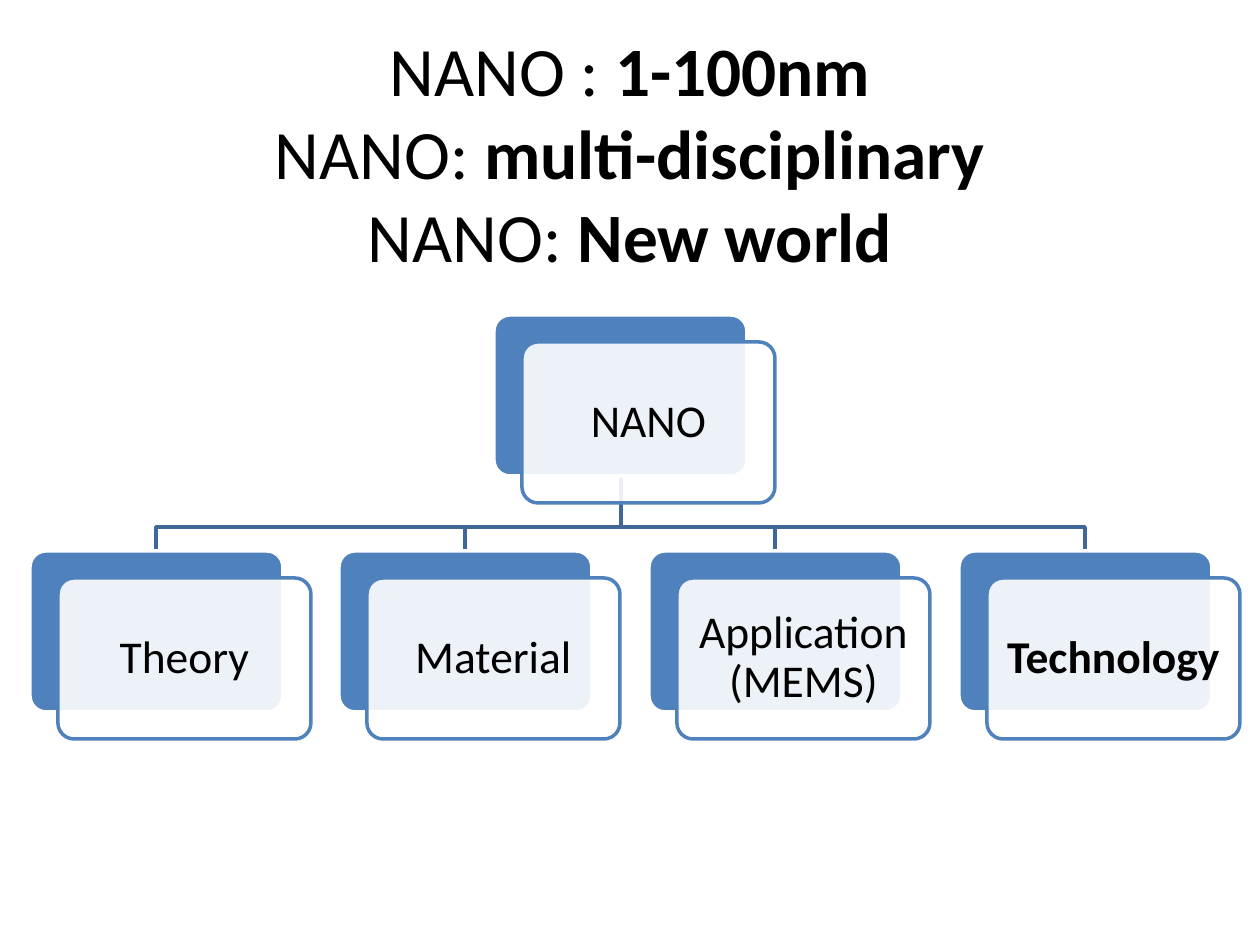
import pptx
import pptx.util
import pptx.dml.color
import pptx.enum.shapes
import pptx.enum.text
import pptx.oxml.ns
import lxml.etree

PX = 914400 / 126  # EMU in one px
BLUE = pptx.dml.color.RGBColor(0x4F, 0x81, 0xBD)
DARK_BLUE = pptx.dml.color.RGBColor(0x3F, 0x67, 0x97)
WHITE = pptx.dml.color.RGBColor(0xFF, 0xFF, 0xFF)
BLACK = pptx.dml.color.RGBColor(0x00, 0x00, 0x00)

CARD_WIDTH, CARD_HEIGHT = 253, 161
SHIFT_X, SHIFT_Y = 28, 27
ROOT_LEFT, ROOT_TOP = 494, 315
ROW_LEFT, ROW_TOP, ROW_SPAN = 30, 551, 929
BUS_Y = 527


def write_text(shape, lines, size, spacing=1.0, inset=None):
    """Write lines, each a list of (text, bold) runs, centred in the shape."""
    frame = shape.text_frame
    frame.word_wrap = True
    frame.auto_size = pptx.enum.text.MSO_AUTO_SIZE.NONE
    frame.vertical_anchor = pptx.enum.text.MSO_ANCHOR.MIDDLE
    if inset is not None:
        frame.margin_left = frame.margin_right = round(inset * PX)
        frame.margin_top = frame.margin_bottom = round(inset * PX)
    paragraph = frame.paragraphs[0]
    paragraph.alignment = pptx.enum.text.PP_ALIGN.CENTER
    paragraph.line_spacing = spacing
    for index, line in enumerate(lines):
        if index:
            paragraph.add_line_break()
        for text, bold in line:
            run = paragraph.add_run()
            run.text = text
            run.font.name = "Calibri"
            run.font.size = pptx.util.Pt(size)
            run.font.bold = bold
            run.font.color.rgb = BLACK


def add_card(left, top, fill, line):
    shape = slide.shapes.add_shape(
        pptx.enum.shapes.MSO_SHAPE.ROUNDED_RECTANGLE,
        *(round(value * PX) for value in (left, top, CARD_WIDTH, CARD_HEIGHT)))
    shape.adjustments[0] = 0.1
    shape.shadow.inherit = False
    shape.fill.solid()
    shape.fill.fore_color.rgb = fill
    shape.line.color.rgb = line
    shape.line.width = pptx.util.Pt(2)
    return shape


presentation = pptx.Presentation()
presentation.slide_width = pptx.util.Inches(10)
presentation.slide_height = pptx.util.Inches(7.5)
slide = presentation.slides.add_slide(presentation.slide_layouts[5])

# Title
title = slide.shapes.title
title.left, title.top, title.width, title.height = (
    round(value * PX) for value in (63, 38, 1134, 228))
write_text(title, [
    [("NANO : ", False), ("1-100nm", True)],
    [("NANO: ", False), ("multi-disciplinary", True)],
    [("NANO:", False), (" New world", True)],
], size=39.6)

# Branches of the chart: label, bold
branches = [("Theory", False), ("Material", False),
            ("Application (MEMS)", False), ("Technology", True)]
row_lefts = [ROW_LEFT + ROW_SPAN * index // (len(branches) - 1)
             for index in range(len(branches))]

# Elbow lines from the root to each branch
root_x = ROOT_LEFT + CARD_WIDTH // 2 + 1
for left in reversed(row_lefts):
    branch_x = left + CARD_WIDTH // 2
    builder = slide.shapes.build_freeform(root_x, ROOT_TOP + CARD_HEIGHT, scale=PX)
    builder.add_line_segments(
        [(root_x, BUS_Y), (branch_x, BUS_Y), (branch_x, ROW_TOP)], close=False)
    elbow = builder.convert_to_shape()
    elbow.shadow.inherit = False
    elbow.fill.background()
    elbow.line.color.rgb = DARK_BLUE
    elbow.line.width = pptx.util.Pt(2)

# Cards: a blue back and a translucent white front with the label
cards = [("NANO", False, ROOT_LEFT, ROOT_TOP)]
cards += [(label, bold, left, ROW_TOP)
          for (label, bold), left in zip(branches, row_lefts)]
for label, bold, left, top in cards:
    add_card(left, top, fill=BLUE, line=WHITE)
    front = add_card(left + SHIFT_X, top + SHIFT_Y, fill=WHITE, line=BLUE)
    color = front.fill._xPr.find(".//" + pptx.oxml.ns.qn("a:srgbClr"))
    lxml.etree.SubElement(color, pptx.oxml.ns.qn("a:alpha"), val="90000")
    write_text(front, [[(label, bold)]], size=26, spacing=0.9, inset=14)

presentation.save("out.pptx")
